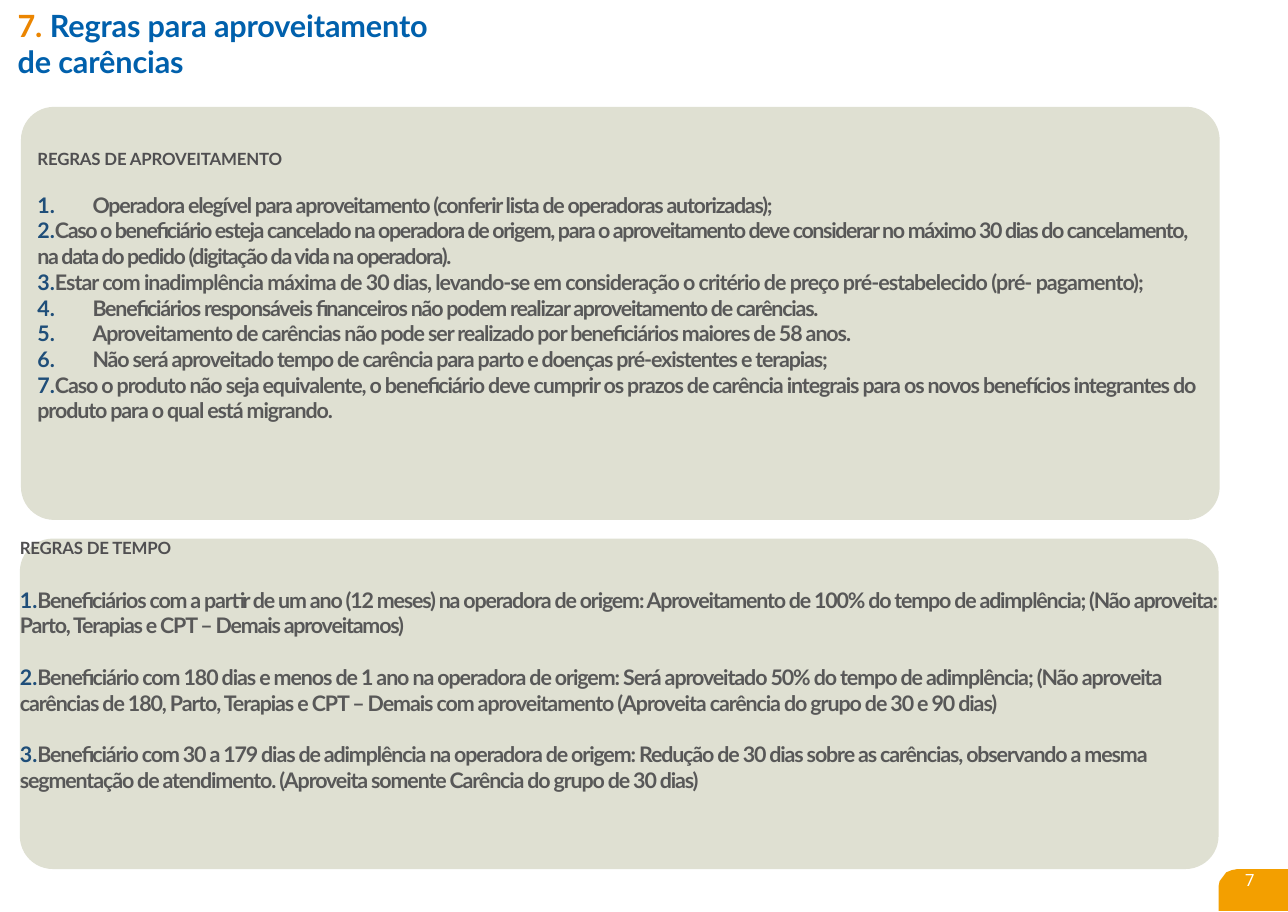
from pptx import Presentation
from pptx.dml.color import RGBColor
from pptx.enum.shapes import MSO_SHAPE
from pptx.enum.text import MSO_ANCHOR, PP_ALIGN
from pptx.oxml.xmlchemy import OxmlElement
from pptx.util import Inches, Pt

ROUNDED = MSO_SHAPE.ROUNDED_RECTANGLE
TOP = MSO_ANCHOR.TOP
LEFT = PP_ALIGN.LEFT
BLUE, ORANGE, AMBER, SAND = "0060AC", "EB8500", "F39F00", "DFE0D2"
HEADING_GREY, TEXT_GREY, NUMBER_BLUE, WHITE = "504F51", "585858", "1F4E79", "FFFFFF"

USE_RULES = [
    ("Operadora elegível para aproveitamento (conferir lista de operadoras autorizadas);",
     True, -0.82),
    ("Caso o beneficiário esteja cancelado na operadora de origem, para o aproveitamento deve "
     "considerar no máximo 30 dias do cancelamento, na data do pedido (digitação da vida na "
     "operadora).", False, -0.92),
    ("Estar com inadimplência máxima de 30 dias, levando-se em consideração o critério de preço "
     "pré-estabelecido (pré- pagamento);", False, -0.66),
    ("Beneficiários responsáveis financeiros não podem realizar aproveitamento de carências.",
     True, -0.82),
    ("Aproveitamento de carências não pode ser realizado por beneficiários maiores de 58 anos.",
     True, -0.74),
    ("Não será aproveitado tempo de carência para parto e doenças pré-existentes e terapias;",
     True, -0.76),
    ("Caso o produto não seja equivalente, o beneficiário deve cumprir os prazos de carência "
     "integrais para os novos benefícios integrantes do produto para o qual está migrando.",
     False, -0.73),
]
TIME_RULES = [
    ("Beneficiários com a partir de um ano (12 meses) na operadora de origem: Aproveitamento de "
     "100% do tempo de adimplência; (Não aproveita: Parto, Terapias e CPT – Demais "
     "aproveitamos)", False, -0.8),
    ("Beneficiário com 180 dias e menos de 1 ano na operadora de origem: Será aproveitado 50% do "
     "tempo de adimplência; (Não aproveita carências de 180, Parto, Terapias e CPT – Demais com "
     "aproveitamento (Aproveita carência do grupo de 30 e 90 dias)", False, -0.75),
    ("Beneficiário com 30 a 179 dias de adimplência na operadora de origem: Redução de 30 dias "
     "sobre as carências, observando a mesma segmentação de atendimento. (Aproveita somente "
     "Carência do grupo de 30 dias)", False, -0.77),
]


def rgb(color):
    return RGBColor.from_string(color)


def paint(shape, color):
    shape.shadow.inherit = False
    shape.fill.solid()
    shape.fill.fore_color.rgb = rgb(color)
    shape.line.fill.background()


def set_font(font, size, color, name="Lato", bold=True):
    font.size = Pt(size)
    font.name = name
    font.bold = bold
    font.color.rgb = rgb(color)


def add_run(p, text, spacing):
    r = p.add_run()
    r.text = text
    r.font._element.set("spc", str(round(spacing * 100)))
    return r


def clear_frame(tf):
    tf.word_wrap = True
    tf.vertical_anchor = TOP
    tf.margin_left = tf.margin_right = tf.margin_bottom = 0
    tf.margin_top = Inches(0.01)


def add_panel(s, left, top, width, height):
    panel = s.shapes.add_shape(ROUNDED, Inches(left), Inches(top), Inches(width), Inches(height))
    panel.adjustments[0] = 0.3 / height
    paint(panel, SAND)


def add_text(s, left, top, width, height):
    tf = s.shapes.add_textbox(Inches(left), Inches(top), Inches(width), Inches(height)).text_frame
    clear_frame(tf)
    return tf


def indent_paragraph(p, left, first=0):
    pPr = p._p.get_or_add_pPr()
    pPr.set("marL", str(Inches(left)))
    pPr.set("indent", str(Inches(first)))
    return pPr


def number_paragraph(p, number, hanging):
    pPr = indent_paragraph(p, 0.51, -0.5) if hanging else indent_paragraph(p, 0.01)
    bullet_color = OxmlElement("a:buClr")
    value = OxmlElement("a:srgbClr")
    value.set("val", NUMBER_BLUE)
    bullet_color.append(value)
    numbering = OxmlElement("a:buAutoNum")
    numbering.set("type", "arabicPeriod")
    numbering.set("startAt", str(number))
    for element in (bullet_color, numbering):
        pPr.insert_element_before(element, "a:tabLst", "a:defRPr", "a:extLst")


def add_rules(tf, heading, rules, heading_gap, rule_gap):
    p = tf.paragraphs[0]
    p.space_before = Pt(1)
    indent_paragraph(p, 0.01)
    set_font(p.font, 11, HEADING_GREY)
    add_run(p, heading, -0.15)
    for number, (text, hanging, spacing) in enumerate(rules, 1):
        p = tf.add_paragraph()
        p.space_before = Pt(heading_gap if number == 1 else rule_gap)
        set_font(p.font, 14, TEXT_GREY)
        number_paragraph(p, number, hanging)
        add_run(p, text, spacing)


def set_title(s):
    title = s.shapes.title
    title.left, title.top = Inches(0.15), Inches(0.05)
    title.width, title.height = Inches(3.89), Inches(0.7)
    clear_frame(title.text_frame)
    p = title.text_frame.paragraphs[0]
    p.alignment = LEFT
    p.space_before = Pt(1)
    indent_paragraph(p, 0.01)
    for text, color in (("7. ", ORANGE), ("Regras para aproveitamento de carências", BLUE)):
        set_font(add_run(p, text, -0.12).font, 20, color)


def add_page_number(s):
    corner = [(11.23, 7.89), (11.18, 7.9), (11.13, 7.92), (11.1, 7.96), (11.07, 8),
              (11.06, 8.05), (11.06, 8.27), (11.69, 8.27)]
    builder = s.shapes.build_freeform(Inches(11.69), Inches(7.89))
    builder.add_line_segments([(Inches(x), Inches(y)) for x, y in corner])
    paint(builder.convert_to_shape(), AMBER)
    p = add_text(s, 11.3, 7.89, 0.11, 0.2).paragraphs[0]
    p.text = "7"
    set_font(p.font, 11, WHITE, "Roboto", False)


def main():
    prs = Presentation()
    prs.slide_width, prs.slide_height = Inches(11.69), Inches(8.28)
    s = prs.slides.add_slide(prs.slide_layouts[5])
    set_title(s)
    add_panel(s, 0.19, 0.97, 10.88, 3.75)
    add_panel(s, 0.18, 4.89, 10.88, 3)
    add_rules(add_text(s, 0.33, 1.34, 10.59, 2.75),
              "REGRAS DE APROVEITAMENTO", USE_RULES, 15, 0)
    add_rules(add_text(s, 0.17, 4.87, 10.91, 2.34),
              "REGRAS DE TEMPO", TIME_RULES, 19, 16.8)
    add_page_number(s)
    prs.save("out.pptx")


if __name__ == "__main__":
    main()
